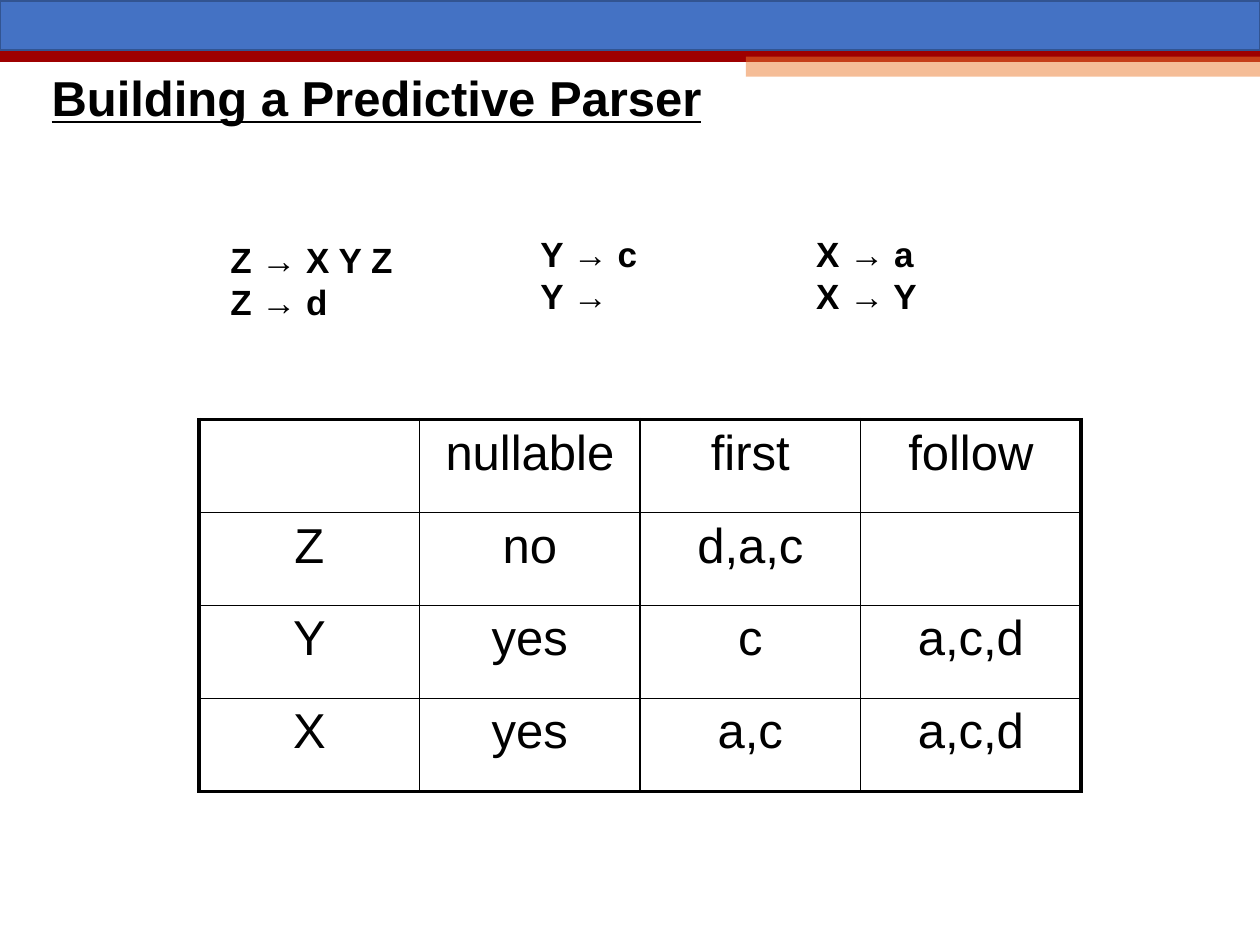
from lxml.etree import SubElement
from pptx import Presentation
from pptx.dml.color import RGBColor
from pptx.enum.shapes import MSO_CONNECTOR, MSO_SHAPE
from pptx.enum.text import MSO_ANCHOR, MSO_AUTO_SIZE, PP_ALIGN
from pptx.oxml.ns import qn
from pptx.util import Inches, Pt


def color(hex_text):
    return RGBColor.from_string(hex_text)


def write(frame, text, size, bold=False, underline=False, align=PP_ALIGN.LEFT):
    frame.text = text
    for paragraph in frame.paragraphs:
        paragraph.alignment = align
        for run in paragraph.runs:
            font = run.font
            font.name, font.size = "Arial", Pt(size)
            font.bold, font.underline = bold, underline
            font.color.rgb = color("000000")


presentation = Presentation()
presentation.slide_width = Inches(10)
presentation.slide_height = Inches(7.5)
slide = presentation.slides.add_slide(presentation.slide_layouts[5])
shapes = slide.shapes

# Header: red rule, translucent orange strip, blue band
rule = shapes.add_connector(MSO_CONNECTOR.STRAIGHT, 0, Inches(0.44),
                            presentation.slide_width, Inches(0.44))
rule.line.color.rgb = color("9E0000")
rule.line.width = Pt(7.5)
SubElement(rule._element.spPr, qn("a:effectLst"))

strip = shapes.add_shape(MSO_SHAPE.RECTANGLE, Inches(5.92), Inches(0.45),
                         Inches(4.08), Inches(0.16))
band = shapes.add_shape(MSO_SHAPE.RECTANGLE, 0, Inches(0.01),
                        presentation.slide_width, Inches(0.39))
for bar, fill in ((strip, "ED7D31"), (band, "4472C4")):
    bar.shadow.inherit = False
    bar.fill.solid()
    bar.fill.fore_color.rgb = color(fill)
strip.line.fill.background()
strip_color = strip._element.spPr.find(qn("a:solidFill"))[0]
SubElement(strip_color, qn("a:alpha"), val="50000")
band.line.color.rgb = color("325491")
band.line.width = Pt(1)

# Title
title = shapes.title
title.left, title.top = Inches(0.31), Inches(0.47)
title.width, title.height = Inches(9), Inches(0.66)
title.text_frame.vertical_anchor = MSO_ANCHOR.MIDDLE
write(title.text_frame, "Building a Predictive Parser", 28, bold=True, underline=True)
title.text_frame.paragraphs[0].line_spacing = 0.9

# Grammar productions
productions = [
    (1.73, 1.84, 1.5, "Z → X Y Z\nZ → d"),
    (4.19, 1.8, 0.97, "Y → c\nY →"),
    (6.38, 1.8, 1.07, "X → a\nX → Y"),
]
for left, top, width, text in productions:
    box = shapes.add_textbox(Inches(left), Inches(top), Inches(width), Inches(0.77))
    box.text_frame.word_wrap = False
    box.text_frame.auto_size = MSO_AUTO_SIZE.SHAPE_TO_FIT_TEXT
    write(box.text_frame, text, 20, bold=True)

# Table of nullable, first and follow sets
rows = [
    ["", "nullable", "first", "follow"],
    ["Z", "no", "d,a,c", ""],
    ["Y", "yes", "c", "a,c,d"],
    ["X", "yes", "a,c", "a,c,d"],
]
last = len(rows) - 1
table = shapes.add_table(4, 4, Inches(1.58), Inches(3.33),
                         Inches(7), Inches(2.95)).table
table.first_row = table.horz_banding = False
for row_index, row in enumerate(rows):
    for column_index, text in enumerate(row):
        cell = table.cell(row_index, column_index)
        write(cell.text_frame, text, 28, align=PP_ALIGN.CENTER)
        paragraph_properties = cell.text_frame.paragraphs[0]._p.get_or_add_pPr()
        space_before = SubElement(paragraph_properties, qn("a:spcBef"))
        SubElement(space_before, qn("a:spcPct"), val="20000")

        # Outer edges are thicker; borders go before the fill in the XML
        outer_edges = {"L": column_index == 0, "R": column_index == last,
                       "T": row_index == 0, "B": row_index == last}
        cell_properties = cell._tc.get_or_add_tcPr()
        for side, is_outer in outer_edges.items():
            border = SubElement(cell_properties, qn(f"a:ln{side}"),
                                w=str(Pt(2.25 if is_outer else 1)))
            border_fill = SubElement(border, qn("a:solidFill"))
            SubElement(border_fill, qn("a:srgbClr"), val="000000")
        cell.fill.background()

presentation.save("out.pptx")
